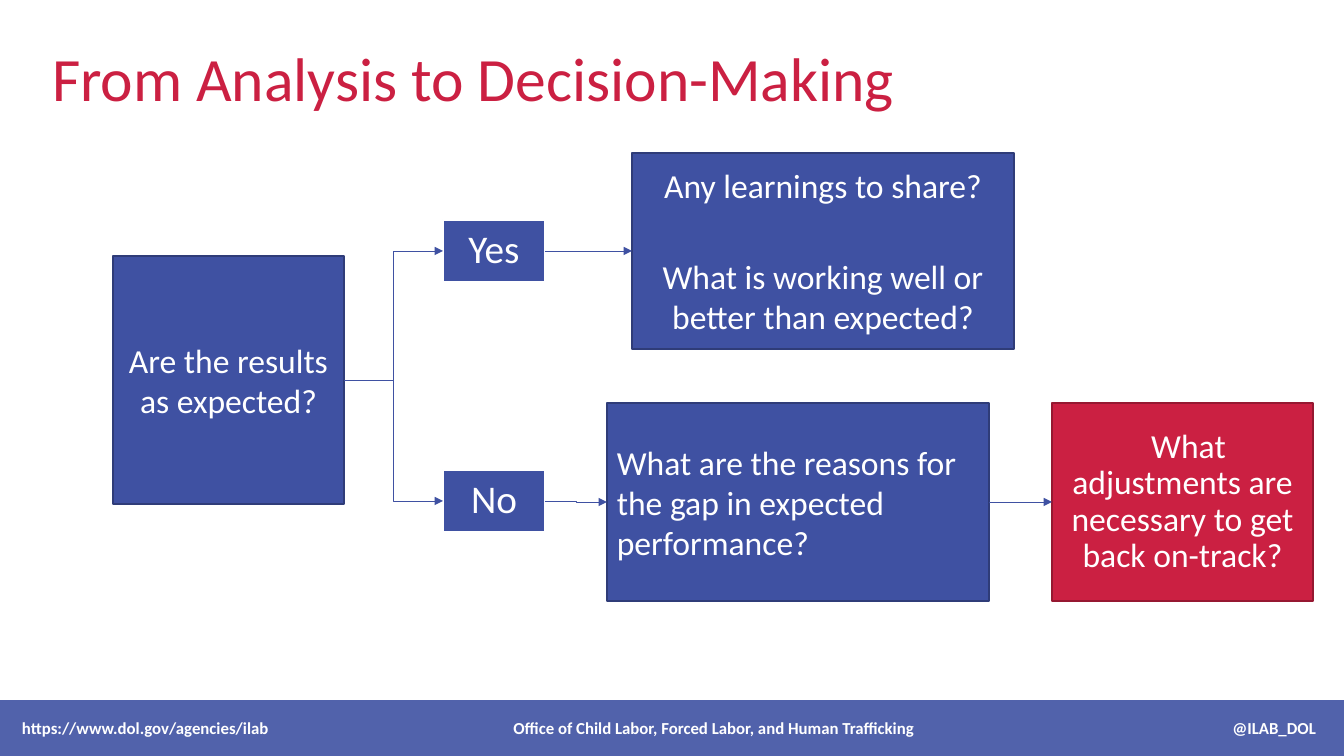
from pptx import Presentation
from pptx.dml.color import RGBColor
from pptx.enum.shapes import MSO_CONNECTOR, MSO_SHAPE
from pptx.enum.text import MSO_ANCHOR, MSO_AUTO_SIZE, PP_ALIGN
from pptx.oxml.ns import qn
from pptx.util import Emu, Pt
from lxml import etree

RECT = MSO_SHAPE.RECTANGLE
STRAIGHT, ELBOW = MSO_CONNECTOR.STRAIGHT, MSO_CONNECTOR.ELBOW
LEFT, CENTER = PP_ALIGN.LEFT, PP_ALIGN.CENTER
MIDDLE = MSO_ANCHOR.MIDDLE
NO_FIT = MSO_AUTO_SIZE.NONE
LEFT_SIDE, RIGHT_SIDE = 1, 3

FONT = "Calibri"
COLORS = {"blue": "3F51A2", "navy": "2F3C78", "red": "CB2042",
          "maroon": "961831", "white": "FFFFFF"}


def px(n):
    return Emu(round(n * 914400 / 100.8))


def rgb(name):
    return RGBColor.from_string(COLORS[name])


def add_xml(parent, tag, **attrs):
    return etree.SubElement(parent, qn(tag), attrs)


def format_text(tf, size, color, align, spacing=None, bold=False):
    tf.word_wrap = True
    tf.auto_size = NO_FIT
    tf.vertical_anchor = MIDDLE
    for p in tf.paragraphs:
        p.alignment = align
        if spacing:
            p.line_spacing = spacing
        for r in p.runs:
            r.font.name = FONT
            r.font.size = Pt(size)
            r.font.bold = bold
            r.font.color.rgb = rgb(color)


def add_box(s, box, fill, line=None, width=1):
    sp = s.shapes.add_shape(RECT, *map(px, box))
    sp.shadow.inherit = False
    sp.fill.solid()
    sp.fill.fore_color.rgb = rgb(fill)
    if line:
        sp.line.color.rgb = rgb(line)
        sp.line.width = Pt(width)
    else:
        sp.line.fill.background()
    return sp


def add_title(s, box, text):
    sp = s.shapes.title
    sp.left, sp.top, sp.width, sp.height = map(px, box)
    sp.text_frame.text = text
    format_text(sp.text_frame, 44, "red", LEFT, 0.9)


def add_footer(s, box, texts):
    """Bar with text at the left, around the middle and at the right."""
    sp = add_box(s, box, "blue")
    color = sp.fill._xPr.find(qn("a:solidFill"))[0]
    add_xml(color, "a:alpha", val="90000")
    tf = sp.text_frame
    tf.margin_left, tf.margin_right = px(22), 0
    tf.text = "\t".join(texts)
    format_text(tf, 12, "white", LEFT, bold=True)
    tabs = add_xml(tf.paragraphs[0]._p.get_or_add_pPr(), "a:tabLst")
    for pos, align in ((692, "ctr"), (1294, "r")):
        add_xml(tabs, "a:tab", pos=str(px(pos)), algn=align)


def add_question(s, box, text, fill="blue", line="navy", align=CENTER):
    sp = add_box(s, box, fill, line)
    sp.text_frame.text = text
    format_text(sp.text_frame, 24, "white", align)
    return sp


def add_answer(s, box, text):
    sp = add_box(s, box, "blue", "white", 1.5)
    sp.text_frame.text = text
    format_text(sp.text_frame, 28, "white", CENTER, 0.9)
    return sp


def add_arrow(s, kind, start, end):
    """Arrow from the right side of one box to the left side of another."""
    c = s.shapes.add_connector(
        kind, start.left + start.width, start.top + start.height // 2,
        end.left, end.top + end.height // 2)
    c.begin_connect(start, RIGHT_SIDE)
    c.end_connect(end, LEFT_SIDE)
    c.line.color.rgb = rgb("blue")
    c.line.width = Pt(0.5)
    add_xml(c.line._get_or_add_ln(), "a:tailEnd", type="triangle")
    add_xml(c._element.spPr, "a:effectLst")


def add_decision_flow(s, x, y):
    # Boxes
    results = add_question(s, (x, y + 103, 231, 248), "Are the results as expected?")
    yes, no = [add_answer(s, (x + 330, y + top, 102, 62), text)
               for text, top in (("Yes", 67), ("No", 317))]
    learnings = add_question(
        s, (x + 519, y, 382, 196),
        "Any learnings to share?\nWhat is working well or better than expected?")
    learnings.text_frame.paragraphs[1].space_before = Pt(36)
    reasons = add_question(
        s, (x + 494, y + 250, 382, 198),
        "What are the reasons for the gap in expected performance?", align=LEFT)
    adjustments = add_question(
        s, (x + 939, y + 250, 261, 198),
        "What adjustments are necessary to get back on-track?", "red", "maroon")
    p = adjustments.text_frame.paragraphs[0]
    p.line_spacing = 0.9
    p._p.get_or_add_pPr().set("indent", str(px(12)))

    # Arrows
    for kind, start, end in ((ELBOW, results, yes), (ELBOW, results, no),
                             (STRAIGHT, yes, learnings), (ELBOW, no, reasons),
                             (STRAIGHT, reasons, adjustments)):
        add_arrow(s, kind, start, end)


def main():
    prs = Presentation()
    prs.slide_width, prs.slide_height = px(1344), px(756)
    s = prs.slides.add_slide(prs.slide_layouts[5])
    add_footer(s, (0, 700, 1348, 56),
               ("https://www.dol.gov/agencies/ilab",
                "Office of Child Labor, Forced Labor, and Human Trafficking",
                "@ILAB_DOL"))
    add_title(s, (42, 17, 1033, 130), "From Analysis to Decision-Making")
    add_decision_flow(s, 113, 153)
    prs.save("out.pptx")


if __name__ == "__main__":
    main()
